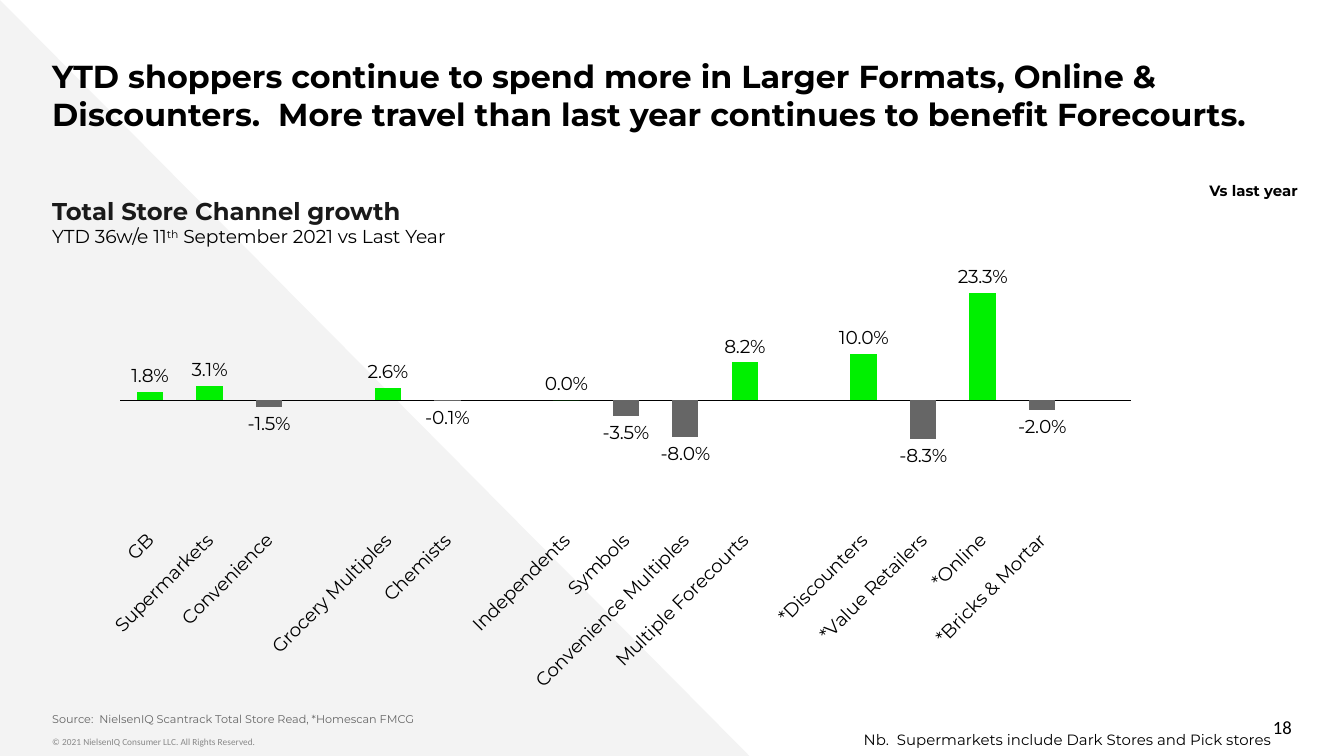
from lxml import etree
from pptx import Presentation
from pptx.chart.data import CategoryChartData
from pptx.dml.color import RGBColor
from pptx.enum.chart import XL_CHART_TYPE, XL_LABEL_POSITION, XL_TICK_LABEL_POSITION, XL_TICK_MARK
from pptx.enum.shapes import MSO_SHAPE
from pptx.enum.text import MSO_ANCHOR, MSO_AUTO_SIZE, PP_ALIGN
from pptx.oxml.ns import qn
from pptx.util import Pt


def paint(item, color):
    if hasattr(item, "solid"):
        item.solid()
        item.fore_color.rgb = RGBColor.from_string(color)
    else:
        item.color.rgb = RGBColor.from_string(color)


def write(place, text, size, color="000000", face="Montserrat", bold=False,
          pad=(0, 3.6), anchor=MSO_ANCHOR.TOP, align=PP_ALIGN.LEFT, wrap=True):
    box = slide.shapes.add_textbox(*[Pt(n) for n in place])
    frame = box.text_frame
    frame.word_wrap = wrap
    frame.auto_size = MSO_AUTO_SIZE.NONE if wrap else MSO_AUTO_SIZE.SHAPE_TO_FIT_TEXT
    frame.margin_left = frame.margin_right = Pt(pad[0])
    frame.margin_top = frame.margin_bottom = Pt(pad[1])
    frame.vertical_anchor = anchor
    frame.text = text
    para = frame.paragraphs[0]
    para.alignment = align
    for run in para.runs:
        run.font.name = face
        run.font.size = Pt(size)
        run.font.bold = bold
        paint(run.font, color)
    return para


deck = Presentation()
deck.slide_width = Pt(720)
deck.slide_height = Pt(405)
slide = deck.slides.add_slide(deck.slide_layouts[6])

wedge = slide.shapes.add_shape(MSO_SHAPE.RIGHT_TRIANGLE, Pt(0), Pt(0), Pt(402.5), Pt(406))
wedge.shadow.inherit = False
paint(wedge.fill, "F3F3F3")
wedge.line.fill.background()

write((28, 391, 399, 14.4), "© 2021 NielsenIQ Consumer LLC. All Rights Reserved.", 5, "888888", "Calibri")
write((530, 378.7, 162, 21.6), "18", 10, face="Calibri", anchor=MSO_ANCHOR.MIDDLE, align=PP_ALIGN.RIGHT)

head = write((28, 101.5, 299.5, 35.3), "Total Store Channel growth", 13, "1A1A1A", bold=True)
head.space_after = Pt(12)
head.add_line_break()
for text, lift in [("YTD 36w/e 11", 0), ("th", 30000), (" September 2021 vs Last Year", 0)]:
    run = head.add_run()
    run.text = text
    run.font.name = "Montserrat"
    run.font.size = Pt(10)
    run.font.bold = False
    paint(run.font, "000000")
    if lift:
        run.font._element.set("baseline", str(lift))

write((28, 23, 687, 31.7),
      "YTD shoppers continue to spend more in Larger Formats, Online & Discounters.  "
      "More travel than last year continues to benefit Forecourts.", 17, bold=True, pad=(0, 7.2))
write((28, 381.6, 642, 14.4), "Source:  NielsenIQ Scantrack Total Store Read, *Homescan FMCG",
      6, "666666", pad=(0, 7.2), anchor=MSO_ANCHOR.BOTTOM)

rows = [
    ("GB", 0.018), ("Supermarkets", 0.031), ("Convenience", -0.015), ("", None),
    ("Grocery Multiples", 0.026), ("Chemists", -0.001), ("", None),
    ("Independents", 0), ("Symbols", -0.035), ("Convenience Multiples", -0.08),
    ("Multiple Forecourts", 0.082), ("", None),
    ("*Discounters", 0.1), ("*Value Retailers", -0.083), ("*Online", 0.233),
    ("*Bricks & Mortar", -0.02), ("", None),
]
data = CategoryChartData(number_format="0.0%")
data.categories = [name for name, rate in rows]
data.add_series("Series 1", [rate for name, rate in rows])
chart = slide.shapes.add_chart(XL_CHART_TYPE.COLUMN_CLUSTERED, Pt(59), Pt(120.2), Pt(565.2), Pt(253.4), data).chart
chart.has_legend = False
chart.has_title = False
chart.font.name = "Montserrat"
chart.font.size = Pt(10)
paint(chart.font, "000000")

plot = chart.plots[0]
plot.gap_width = 125
plot.vary_by_categories = False
plot.has_data_labels = True
labels = plot.data_labels
labels.show_value = True
labels.position = XL_LABEL_POSITION.OUTSIDE_END
labels.number_format = "0.0%"
labels.number_format_is_linked = False

bars = plot.series[0]
bars.invert_if_negative = False
paint(bars.format.fill, "00F000")
for spot, (name, rate) in enumerate(rows):
    if rate is not None and rate < 0:
        paint(bars.points[spot].format.fill, "666666")

scale = chart.value_axis
scale.minimum_scale = -0.25
scale.maximum_scale = 0.35
scale.has_major_gridlines = False
scale.visible = False

base = chart.category_axis
base.tick_label_position = XL_TICK_LABEL_POSITION.LOW
base.major_tick_mark = XL_TICK_MARK.NONE
base.minor_tick_mark = XL_TICK_MARK.NONE
base.format.line.width = Pt(0.75)
paint(base.format.line, "000000")
base.tick_labels.font.size = Pt(10)
turn = chart.element.find(".//" + qn("c:catAx")).find(qn("c:txPr")).find(qn("a:bodyPr"))
turn.set("rot", "-2700000")
turn.set("vert", "horz")

area = chart.element.find(".//" + qn("c:plotArea"))
for old in area.findall(qn("c:layout")):
    area.remove(old)
layout = etree.Element(qn("c:layout"))
area.insert(0, layout)
manual = etree.SubElement(layout, qn("c:manualLayout"))
for tag, value in [("layoutTarget", "inner"), ("xMode", "edge"), ("yMode", "edge"),
                   ("x", "0.007"), ("y", "0.031"), ("w", "0.961"), ("h", "0.585")]:
    etree.SubElement(manual, qn("c:" + tag)).set("val", value)

write((453, 388, 235.4, 17.3), "Nb.  Supermarkets include Dark Stores and Pick stores", 8,
      pad=(7.2, 3.6), align=PP_ALIGN.RIGHT, wrap=False)
write((640.8, 93.6, 62.6, 17.3), "Vs last year", 8, bold=True, pad=(7.2, 3.6), wrap=False)

deck.save("out.pptx")
